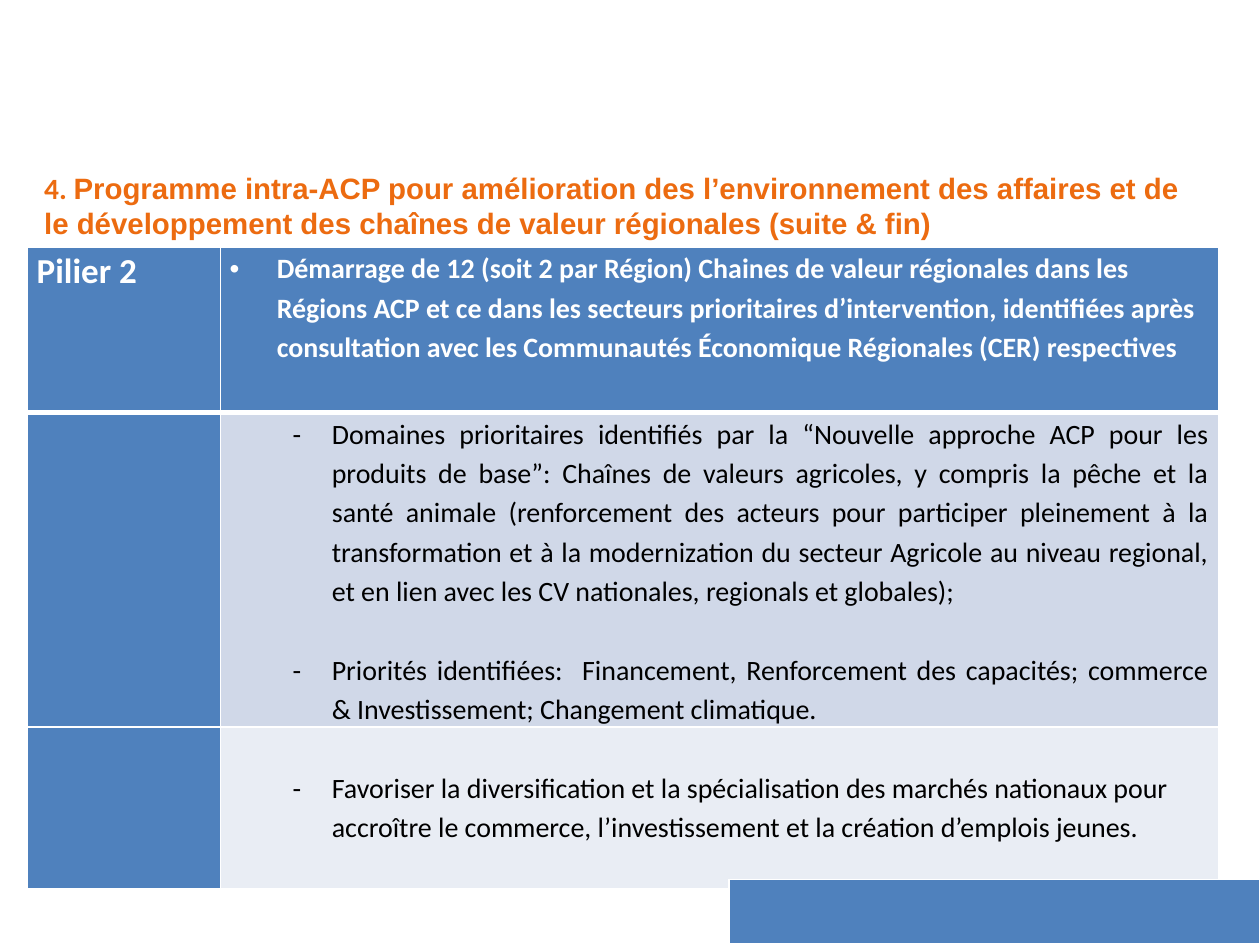
from lxml.etree import SubElement
from pptx import Presentation
from pptx.dml.color import RGBColor
from pptx.enum.text import MSO_AUTO_SIZE as AutoSize, MSO_ANCHOR as Anchor, PP_ALIGN as Align
from pptx.oxml.ns import qn
from pptx.util import Cm, Pt

BLUE, ORANGE, WHITE, BLACK = "4F81BD", "EC6B10", "FFFFFF", "000000"
BAND_DARK, BAND_LIGHT = "D0D8E8", "E9EDF4"
BLANK_LINE = 22.5  # height in points of one line at 16 pt


def rgb(value):
    return RGBColor.from_string(value)


class SlideBuilder:
    font = "Calibri"
    text_size = 16

    def __init__(self, slide):
        self.slide = slide

    def heading(self, parts, left, top, width, height):
        """Put the heading in the body placeholder; parts are (text, font) pairs."""
        self.slide.shapes.title.element.getparent().remove(self.slide.shapes.title.element)
        body = self.slide.placeholders[1]
        body.left, body.top, body.width, body.height = Cm(left), Cm(top), Cm(width), Cm(height)
        frame = body.text_frame
        frame.auto_size = AutoSize.NONE
        frame.vertical_anchor = Anchor.TOP
        frame.margin_left = frame.margin_right = 0
        paragraph = frame.paragraphs[0]
        for text, font in parts:
            run = paragraph.add_run()
            run.text, run.font.name = text, font
        self.indent(paragraph, 0, 0)
        self.style(paragraph, 16.8, ORANGE, True)

    def table(self, left, top, columns, rows):
        shape = self.slide.shapes.add_table(
            len(rows), len(columns), Cm(left), Cm(top), Cm(sum(columns)), Cm(sum(rows)))
        table = shape.table
        for column, width in zip(table.columns, columns):
            column.width = Cm(width)
        for row, height in zip(table.rows, rows):
            row.height = Cm(height)
        return table

    def cell(self, cell, fill, bottom=1, top=1):
        cell.margin_left = cell.margin_right = Cm(0.19)
        cell.margin_top = cell.margin_bottom = 0
        props = cell._tc.get_or_add_tcPr()
        for side, points in (("L", 1), ("R", 1), ("T", top), ("B", bottom)):
            line = SubElement(props, qn(f"a:ln{side}"), w=str(Pt(points)))
            SubElement(SubElement(line, qn("a:solidFill")), qn("a:srgbClr"), val=WHITE)
        cell.fill.solid()
        cell.fill.fore_color.rgb = rgb(fill)

    def item(self, paragraph, text, mark, margin, hang, color=BLACK, bold=False,
             align=Align.LEFT, level=0, gap=0):
        paragraph.text, paragraph.level = text, level
        paragraph.alignment = align
        paragraph.line_spacing = 1.15
        if gap:
            paragraph.space_before = Pt(gap)
        self.indent(paragraph, margin, -hang, mark)
        self.style(paragraph, self.text_size, color, bold, self.font)

    def indent(self, paragraph, margin, first, mark=None):
        props = paragraph._p.get_or_add_pPr()
        props.set("marL", str(Cm(margin)))
        props.set("indent", str(Cm(first)))
        if mark:
            SubElement(props, qn("a:buFont"), typeface="Arial" if mark == "•" else self.font)
            SubElement(props, qn("a:buChar"), char=mark)
        else:
            SubElement(props, qn("a:buNone"))

    def style(self, paragraph, size, color, bold, name=None):
        font = paragraph.font
        font.size, font.bold = Pt(size), bold
        font.color.rgb = rgb(color)
        if name:
            font.name = name


def main():
    deck = Presentation()
    deck.slide_width, deck.slide_height = Cm(25.4), Cm(19.05)
    builder = SlideBuilder(deck.slides.add_slide(deck.slide_layouts[1]))

    # Heading
    builder.heading([
        ("4. ", "Calibri"),
        ("Programme intra-ACP pour amélioration des l’environnement des affaires et de "
         "le développement des chaînes de valeur régionales (suite & fin)", "Arial"),
    ], 0.89, 3.3, 23.4, 1.42)

    # Pillar table: labels on the left, contents on the right
    pillar = builder.table(0.55, 4.98, [3.89, 20.12], [3.33, 6.32, 3.25])
    for row, content_fill in enumerate([BLUE, BAND_DARK, BAND_LIGHT]):
        for column, fill in enumerate([BLUE, content_fill]):
            builder.cell(pillar.cell(row, column), fill,
                         bottom=3 if row == 0 else 1, top=3 if row == 1 else 1)

    label = pillar.cell(0, 0).text_frame.paragraphs[0]
    label.text = "Pilier 2"
    label.alignment, label.line_spacing = Align.JUSTIFY, 1.07
    builder.style(label, 20, WHITE, True, builder.font)

    builder.item(
        pillar.cell(0, 1).text_frame.paragraphs[0],
        "Démarrage de 12 (soit 2 par Région) Chaines de valeur régionales dans les Régions ACP "
        "et ce dans les secteurs prioritaires d’intervention, identifiées après consultation "
        "avec les Communautés Économique Régionales (CER) respectives",
        "•", 0.95, 0.95, WHITE, True)

    # Priorities
    dash = dict(mark="-", margin=2.06, hang=0.79, level=1)
    priorities = pillar.cell(1, 1).text_frame
    builder.item(
        priorities.paragraphs[0],
        "Domaines prioritaires identifiés par la “Nouvelle approche ACP pour les produits de "
        "base”: Chaînes de valeurs agricoles, y compris la pêche et la santé animale "
        "(renforcement des acteurs pour participer pleinement à la transformation et à la "
        "modernization du secteur Agricole au niveau regional, et en lien avec les CV "
        "nationales, regionals et globales);",
        align=Align.JUSTIFY, **dash)
    builder.item(
        priorities.add_paragraph(),
        "Priorités identifiées:  Financement, Renforcement des capacités; commerce & "
        "Investissement; Changement climatique.",
        align=Align.JUSTIFY, gap=BLANK_LINE, **dash)

    # Markets, set one line below the top of the cell
    markets = pillar.cell(2, 1)
    markets.margin_top = Pt(BLANK_LINE)
    builder.item(
        markets.text_frame.paragraphs[0],
        "Favoriser la diversification et la spécialisation des marchés nationaux pour "
        "accroître le commerce, l’investissement et la création d’emplois jeunes.", **dash)

    # Footer band
    footer = builder.table(14.7, 17.73, [10.7], [1.32])
    builder.cell(footer.cell(0, 0), BLUE, bottom=3)

    deck.save("out.pptx")


if __name__ == "__main__":
    main()
